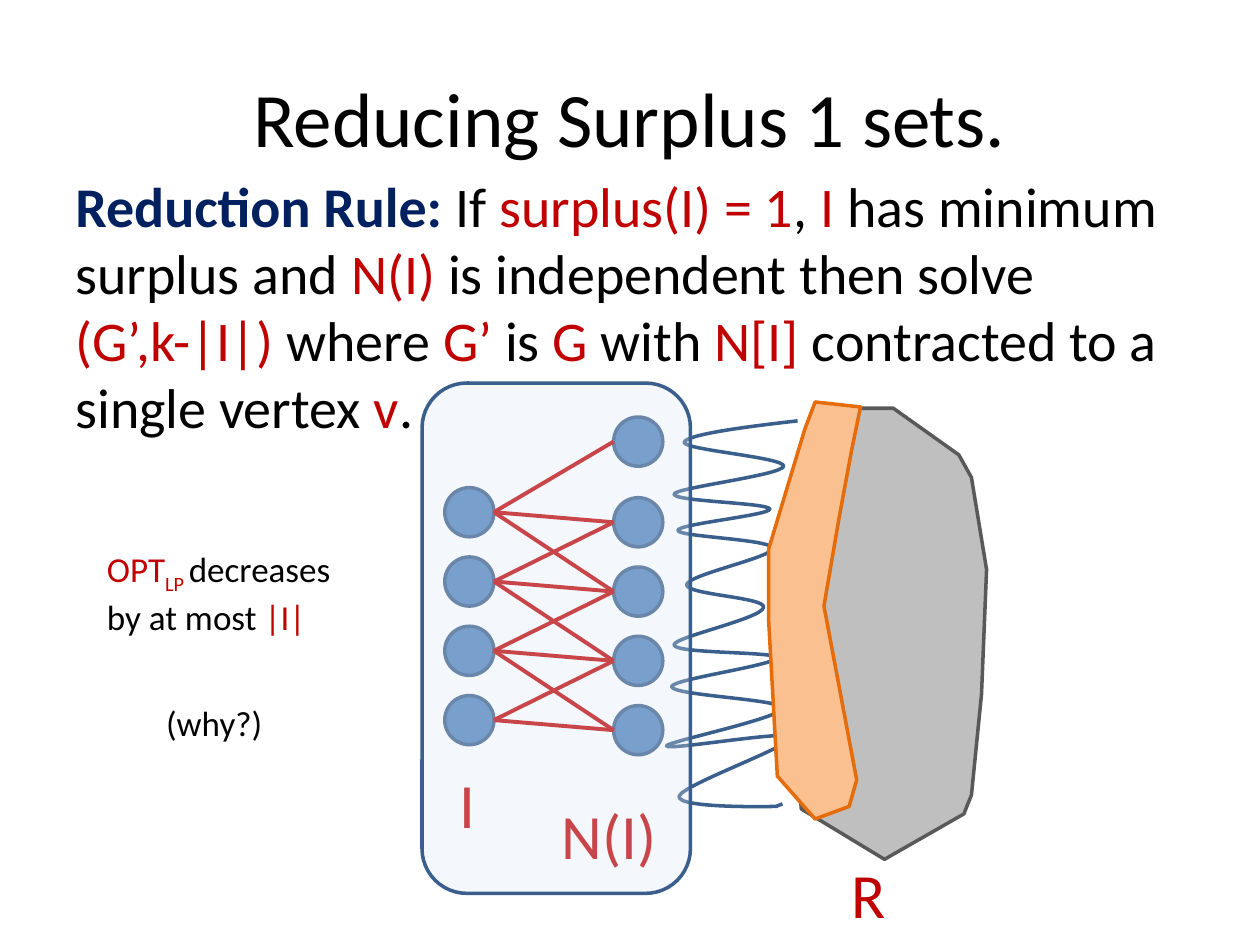
from collections import namedtuple

from lxml import etree
from pptx import Presentation
from pptx.dml.color import RGBColor
from pptx.enum.shapes import MSO_CONNECTOR, MSO_SHAPE
from pptx.enum.text import MSO_ANCHOR, MSO_AUTO_SIZE, PP_ALIGN
from pptx.oxml.ns import qn
from pptx.util import Inches, Pt

OVAL, ROUNDED = MSO_SHAPE.OVAL, MSO_SHAPE.ROUNDED_RECTANGLE
STRAIGHT = MSO_CONNECTOR.STRAIGHT
LEFT, CENTER = PP_ALIGN.LEFT, PP_ALIGN.CENTER
TOP, MIDDLE = MSO_ANCHOR.TOP, MSO_ANCHOR.MIDDLE
FIT_TEXT = MSO_AUTO_SIZE.SHAPE_TO_FIT_TEXT

BLACK = RGBColor(0x00, 0x00, 0x00)
NAVY = RGBColor(0x00, 0x20, 0x60)
RED = RGBColor(0xC0, 0x00, 0x00)
BLUE = RGBColor(0x4F, 0x81, 0xBD)
DARK_BLUE = RGBColor(0x3A, 0x5F, 0x8C)
PALE_BLUE = RGBColor(0xDC, 0xE6, 0xF2)
GRAY = RGBColor(0xBF, 0xBF, 0xBF)
DARK_GRAY = RGBColor(0x59, 0x59, 0x59)
PEACH = RGBColor(0xFA, 0xC0, 0x90)
ORANGE = RGBColor(0xE4, 0x6C, 0x0A)

# The slide is a grid of 1000 columns by 750 rows of square cells.
WIDTH, HEIGHT = Inches(10), Inches(7.5)
CELL = WIDTH // 1000
Box = namedtuple("Box", "left top width height")

VERTEX = 39
VERTEX_STEP = 55

REST_OUTLINE = [(142, 37), (90, 0), (33, 0), (0, 118), (17, 318), (83, 358),
                (146, 322), (152, 307), (160, 227), (164, 128), (152, 55)]
NEIGHBOR_OUTLINE = [(66, 38), (56, 92), (44, 162), (70, 300), (64, 321), (37, 331),
                    (7, 297), (0, 172), (0, 117), (29, 21), (37, 0), (73, 4)]
# A start, then three points for each curve, then the end of a short straight tail.
SQUIGGLE = [(104, 0),
            (60, 5), (16, 11), (14, 17), (13, 23), (94, 29), (93, 36),
            (92, 43), (8, 53), (6, 58), (4, 64), (81, 65), (82, 70),
            (82, 75), (8, 82), (9, 87), (9, 92), (83, 94), (84, 101),
            (86, 108), (17, 122), (16, 130), (15, 138), (79, 140), (77, 148),
            (76, 157), (4, 172), (6, 178), (8, 185), (88, 183), (87, 188),
            (87, 194), (4, 205), (4, 211), (5, 218), (92, 221), (92, 228),
            (91, 236), (-1, 255), (0, 258), (1, 262), (97, 245), (99, 251),
            (100, 258), (12, 289), (10, 298), (8, 308), (87, 306), (87, 306),
            (92, 304)]


def cells(*counts):
    return [count * CELL for count in counts]


def add_text(page, box, size, paragraphs, align=LEFT, anchor=TOP, wrap=False):
    """Each paragraph is a list of (text, colour) runs; None is a line break."""
    frame = page.shapes.add_textbox(*cells(*box)).text_frame
    frame.word_wrap = wrap
    frame.vertical_anchor = anchor
    if not wrap:
        frame.auto_size = FIT_TEXT
    spans = []
    for index, runs in enumerate(paragraphs):
        para = frame.paragraphs[0] if index == 0 else frame.add_paragraph()
        para.alignment = align
        for run in runs:
            if run is None:
                para.add_line_break()
                continue
            span = para.add_run()
            span.text, span.font.color.rgb = run
            span.font.name = "Calibri"
            span.font.size = Pt(size)
            spans.append(span)
    return spans


def paint(shape, fill, line):
    shape.shadow.inherit = False
    if fill is None:
        shape.fill.background()
    else:
        shape.fill.solid()
        shape.fill.fore_color.rgb = fill
    shape.line.color.rgb = line
    shape.line.width = Pt(2)


def add_outline(page, box, points, fill, line, close=True):
    builder = page.shapes.build_freeform(*points[0], scale=CELL)
    builder.add_line_segments(points[1:], close=close)
    shape = builder.convert_to_shape(*cells(box.left, box.top))
    paint(shape, fill, line)
    return shape


def bend(shape):
    """Turn every three straight segments into one Bezier curve."""
    segments = shape.element.xpath(".//a:lnTo")
    for first in range(0, len(segments) - 2, 3):
        curve = etree.Element(qn("a:cubicBezTo"))
        segments[first].addprevious(curve)
        for segment in segments[first:first + 3]:
            curve.append(segment[0])
            segment.getparent().remove(segment)


def add_edge(page, start, end):
    edge = page.shapes.add_connector(STRAIGHT, *cells(*start, *end))
    edge.line.color.rgb = RED
    edge.line.width = Pt(2.25)
    etree.SubElement(edge.element.spPr, qn("a:effectLst"))


def draw_heading(page, box):
    add_text(page, box, 44, [[("Reducing Surplus 1 sets.", BLACK)]], CENTER, MIDDLE, True)


def draw_rule(page, box):
    spans = add_text(page, box, 32, [[
        ("Reduction Rule:", NAVY), (" If ", BLACK), ("surplus(I) = 1", RED),
        (", ", BLACK), ("I", RED), (" has minimum surplus and ", BLACK),
        ("N(I)", RED), (" is independent then solve ", BLACK), None,
        ("(G’,k-|I|) ", RED), ("where ", BLACK), ("G’", RED), (" is ", BLACK),
        ("G", RED), (" with ", BLACK), ("N[I]", RED),
        (" contracted to a single vertex ", BLACK), ("v", RED), (".", BLACK),
    ]], wrap=True)
    spans[0].font.bold = True


def draw_bipartite_graph(page, box):
    add_text(page, Box(box.left + 20, box.top + 299, 33, 71), 36, [[("I", RED)]])
    add_text(page, Box(box.left + 101, box.top + 323, 96, 71), 36, [[("N(I)", RED)]])
    set_left, neighbor_left = box.left + 18, box.left + 152
    set_tops = [box.top + 83 + VERTEX_STEP * row for row in range(4)]
    neighbor_tops = [box.top + 27] + [box.top + 91 + VERTEX_STEP * row for row in range(4)]
    for left, tops in ((set_left, set_tops), (neighbor_left, neighbor_tops)):
        for top in tops:
            vertex = page.shapes.add_shape(OVAL, *cells(left, top, VERTEX, VERTEX))
            paint(vertex, BLUE, DARK_BLUE)
    for row, top in enumerate(set_tops):
        for neighbor_top in neighbor_tops[row:row + 3]:
            add_edge(page, (set_left + VERTEX, top + VERTEX / 2),
                     (neighbor_left, neighbor_top + VERTEX / 2))


def draw_rest(page, box):
    add_text(page, Box(box.left + 47, box.top + 350, 48, 71), 36, [[("R", RED)]])
    add_outline(page, box, REST_OUTLINE, GRAY, DARK_GRAY)


def draw_squiggle(page, box):
    bend(add_outline(page, box, SQUIGGLE, None, DARK_BLUE, close=False))


def draw_panel(page, box):
    """A see-through frame laid over the bipartite graph."""
    panel = page.shapes.add_shape(ROUNDED, *cells(*box))
    paint(panel, PALE_BLUE, DARK_BLUE)
    color = panel.element.spPr.find(qn("a:solidFill"))[0]
    etree.SubElement(color, qn("a:alpha"), val="30000")


def draw_notes(page, box):
    spans = add_text(page, Box(box.left, box.top, box.width, 77), 20, [
        [("OPT", RED), ("LP ", RED), ("decreases", BLACK)],
        [("by at most ", BLACK), ("|I|", RED)],
    ])
    spans[1].font._element.set("baseline", "-25000")
    add_text(page, Box(box.left + 47, box.top + 122, 97, 44), 20, [[("(why?)", BLACK)]])


def main():
    deck = Presentation()
    deck.slide_width, deck.slide_height = WIDTH, HEIGHT
    page = deck.slides.add_slide(deck.slide_layouts[6])
    graph = Box(335, 304, 213, 405)
    draw_heading(page, Box(50, 30, 900, 125))
    draw_rule(page, Box(50, 131, 900, 252))
    draw_bipartite_graph(page, graph)
    draw_rest(page, Box(619, 324, 164, 359))
    draw_squiggle(page, Box(529, 334, 104, 306))
    draw_panel(page, graph)
    add_outline(page, Box(610, 319, 73, 331), NEIGHBOR_OUTLINE, PEACH, ORANGE)
    draw_notes(page, Box(75, 430, 204, 166))
    deck.save("out.pptx")


if __name__ == "__main__":
    main()
